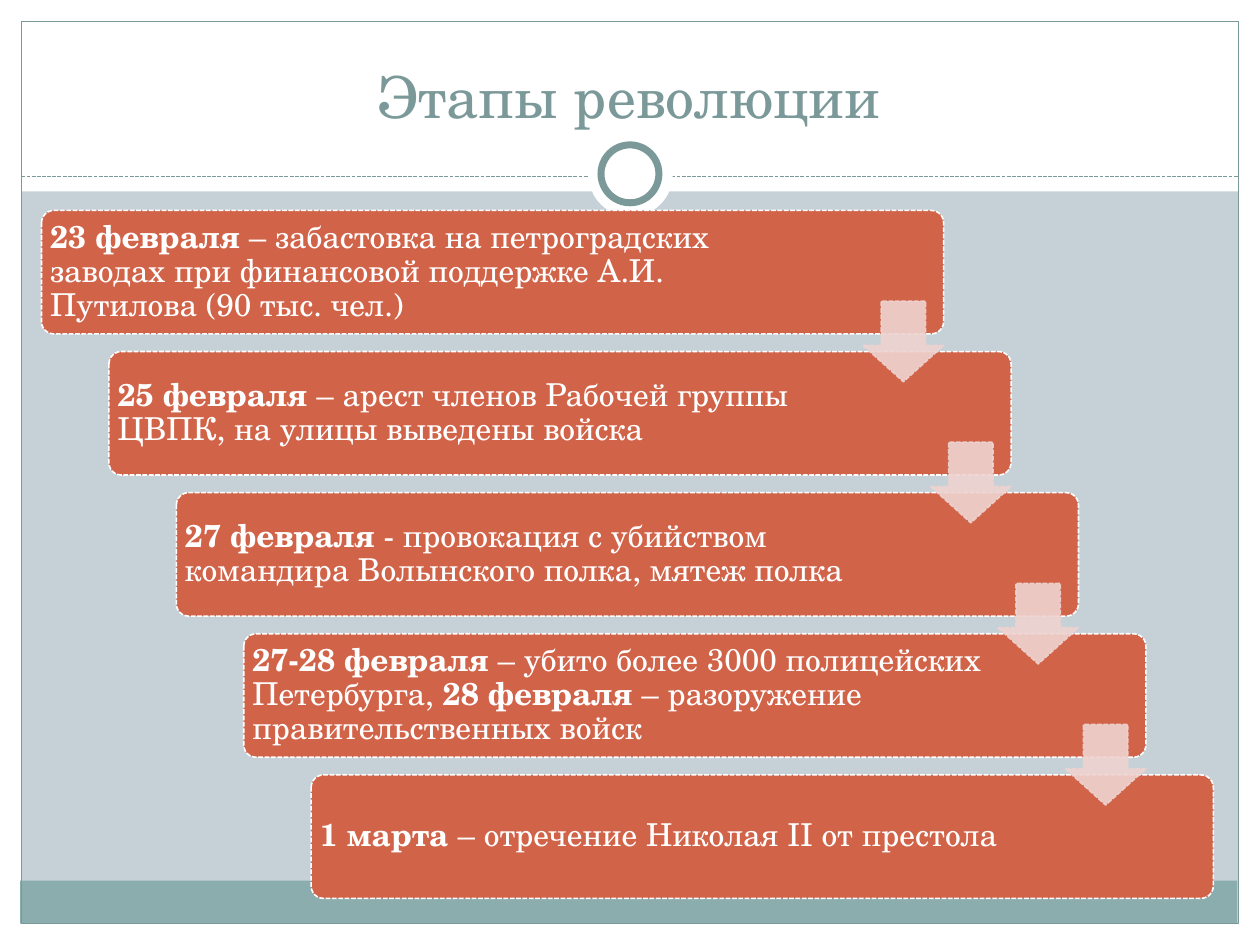
from dataclasses import dataclass

from lxml import etree
from pptx import Presentation
from pptx.dml.color import RGBColor
from pptx.enum.dml import MSO_LINE
from pptx.enum.shapes import MSO_CONNECTOR, MSO_SHAPE
from pptx.enum.text import MSO_ANCHOR, PP_ALIGN
from pptx.oxml.ns import qn
from pptx.util import Inches, Pt

RECTANGLE = MSO_SHAPE.RECTANGLE
ROUNDED = MSO_SHAPE.ROUNDED_RECTANGLE
ELLIPSE = MSO_SHAPE.OVAL
DOWN_ARROW = MSO_SHAPE.DOWN_ARROW
STRAIGHT = MSO_CONNECTOR.STRAIGHT
SHORT_DASH = MSO_LINE.SQUARE_DOT
MIDDLE, BOTTOM = MSO_ANCHOR.MIDDLE, MSO_ANCHOR.BOTTOM
LEFT, CENTER = PP_ALIGN.LEFT, PP_ALIGN.CENTER


@dataclass(frozen=True)
class Theme:
    font: str = "TeX Gyre Schola"
    background: str = "C5D1D7"
    white: str = "FFFFFF"
    accent: str = "7C999A"
    band: str = "8CADAE"
    card: str = "D16349"
    arrow: str = "EED3D0"
    title_size: float = 33
    body_size: float = 18
    thin_line: float = 0.75
    card_line: float = 0.9
    ring_line: float = 4


THEME = Theme()

# Each stage is a list of (text, bold) runs.
STAGES = [
    [("23 февраля ", True),
     ("– забастовка на петроградских заводах при финансовой поддержке "
      "А.И. Путилова (90 тыс. чел.)", False)],
    [("25 февраля ", True),
     ("– арест членов Рабочей группы ЦВПК, на улицы выведены войска", False)],
    [("27 февраля ", True),
     ("- провокация с убийством командира Волынского полка, мятеж полка", False)],
    [("27-28 февраля ", True),
     ("– убито более 3000 полицейских Петербурга, ", False),
     ("28 февраля ", True),
     ("– разоружение правительственных войск", False)],
    [("1 марта ", True), ("– отречение Николая II от престола", False)],
]

CARD_LEFT, CARD_TOP = 0.33, 1.67
CARD_WIDTH, CARD_HEIGHT = 7.16, 0.98
STEP_X, STEP_Y = 0.535, 1.12
ARROW_SIZE, ARROW_DROP = 0.64, 0.72


def color(value):
    return RGBColor.from_string(value)


def style_line(line, line_color, width, dash=None):
    line.color.rgb = color(line_color)
    line.width = Pt(width)
    if dash is not None:
        line.dash_style = dash


def add_box(slide, kind, left, top, width, height, fill=None, line=None,
            line_width=THEME.thin_line, dash=None, adjustments=()):
    shape = slide.shapes.add_shape(
        kind, Inches(left), Inches(top), Inches(width), Inches(height))
    shape.shadow.inherit = False
    if fill:
        shape.fill.solid()
        shape.fill.fore_color.rgb = color(fill)
    else:
        shape.fill.background()
    if line:
        style_line(shape.line, line, line_width, dash)
    else:
        shape.line.fill.background()
    for index, value in enumerate(adjustments):
        shape.adjustments[index] = value
    return shape


def write_text(shape, runs, size, text_color, align=LEFT, anchor=MIDDLE,
               line_spacing=None):
    """Fill the shape with one paragraph of (text, bold) runs."""
    frame = shape.text_frame
    frame.word_wrap = True
    frame.vertical_anchor = anchor
    paragraph = frame.paragraphs[0]
    paragraph.alignment = align
    if line_spacing:
        paragraph.line_spacing = line_spacing
    for text, bold in runs:
        run = paragraph.add_run()
        run.text = text
        run.font.name = THEME.font
        run.font.size = Pt(size)
        run.font.bold = bold
        run.font.color.rgb = color(text_color)


def set_opacity(shape, percent):
    """Apply one opacity to the fill and line colours."""
    for color_element in shape._element.spPr.iter(qn("a:srgbClr")):
        alpha = etree.SubElement(color_element, qn("a:alpha"))
        alpha.set("val", str(percent * 1000))


def add_frame(slide):
    """Draw the white margins, bottom band, border and title divider."""
    for left, top, width, height in (
            (0, 7.33, 10, 0.17), (0, 0, 10, 1.52),
            (0, 0, 0.17, 7.5), (9.83, 0, 0.17, 7.5)):
        add_box(slide, RECTANGLE, left, top, width, height, fill=THEME.white)
    add_box(slide, RECTANGLE, 0.16, 6.99, 9.66, 0.34, fill=THEME.band)
    add_box(slide, RECTANGLE, 0.17, 0.17, 9.66, 7.16, line=THEME.accent)

    divider = slide.shapes.add_connector(
        STRAIGHT, Inches(0.17), Inches(1.4), Inches(9.83), Inches(1.4))
    style_line(divider.line, THEME.accent, THEME.thin_line, SHORT_DASH)
    etree.SubElement(divider._element.spPr, qn("a:effectLst"))

    add_box(slide, ELLIPSE, 4.67, 1.05, 0.67, 0.67, fill=THEME.white)
    add_box(slide, ELLIPSE, 4.77, 1.15, 0.46, 0.46, fill=THEME.white,
            line=THEME.accent, line_width=THEME.ring_line)


def add_title(slide, text):
    title = slide.shapes.title
    title.left, title.top = Inches(0.33), Inches(0.25)
    title.width, title.height = Inches(9.33), Inches(0.83)
    write_text(title, [(text, False)], THEME.title_size, THEME.accent,
               align=CENTER, anchor=BOTTOM)
    # The title has to lie in front of the white header.
    slide.shapes._spTree.append(title._element)


def add_stage(slide, index, runs):
    card = add_box(slide, ROUNDED, CARD_LEFT + index * STEP_X,
                   CARD_TOP + index * STEP_Y, CARD_WIDTH, CARD_HEIGHT,
                   fill=THEME.card, line=THEME.white,
                   line_width=THEME.card_line, dash=SHORT_DASH,
                   adjustments=(0.1,))
    frame = card.text_frame
    frame.margin_left, frame.margin_right = Inches(0.04), Inches(1.2)
    frame.margin_top = frame.margin_bottom = Inches(0.04)
    write_text(card, runs, THEME.body_size, THEME.white, line_spacing=0.9)


def add_stage_arrow(slide, index):
    """Lead from one card to the next, flush with the upper card's right side."""
    left = CARD_LEFT + CARD_WIDTH - ARROW_SIZE + index * STEP_X
    top = CARD_TOP + ARROW_DROP + index * STEP_Y
    arrow = add_box(slide, DOWN_ARROW, left, top, ARROW_SIZE, ARROW_SIZE,
                    fill=THEME.arrow, line=THEME.arrow,
                    line_width=THEME.card_line, dash=SHORT_DASH,
                    adjustments=(0.55, 0.45))
    set_opacity(arrow, 90)


def main():
    presentation = Presentation()
    presentation.slide_width, presentation.slide_height = Inches(10), Inches(7.5)
    title_only = presentation.slide_layouts[5]
    slide = presentation.slides.add_slide(title_only)
    slide.background.fill.solid()
    slide.background.fill.fore_color.rgb = color(THEME.background)

    add_frame(slide)
    add_title(slide, "Этапы революции")
    for index, runs in enumerate(STAGES):
        add_stage(slide, index, runs)
    for index in range(len(STAGES) - 1):
        add_stage_arrow(slide, index)
    presentation.save("out.pptx")


if __name__ == "__main__":
    main()
